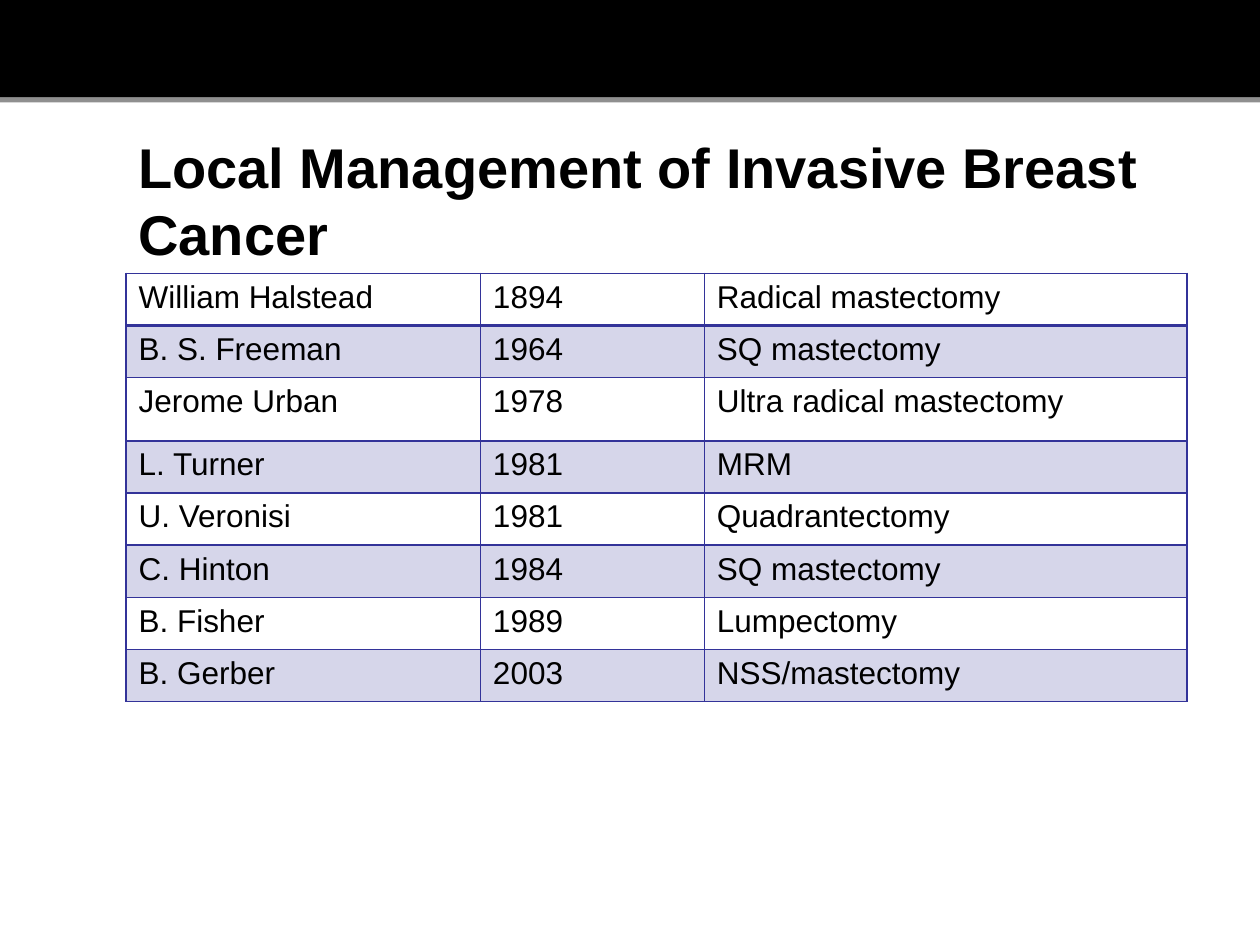
from dataclasses import dataclass

from lxml.etree import SubElement
from pptx import Presentation
from pptx.dml.color import RGBColor
from pptx.enum.shapes import MSO_SHAPE
from pptx.enum.text import MSO_ANCHOR
from pptx.oxml.ns import qn
from pptx.util import Cm, Pt


@dataclass(frozen=True)
class Theme:
    font: str = "Arial"
    ink: str = "000000"
    accent: str = "333399"
    band_opacity: int = 20
    shadow_opacity: int = 43
    title_size: int = 32
    body_size: int = 18


THEME = Theme()
PROCEDURES = [
    ("William Halstead", "1894", "Radical mastectomy"),
    ("B. S. Freeman", "1964", "SQ mastectomy"),
    ("Jerome Urban", "1978", "Ultra radical mastectomy"),
    ("L. Turner", "1981", "MRM"),
    ("U. Veronisi", "1981", "Quadrantectomy"),
    ("C. Hinton", "1984", "SQ mastectomy"),
    ("B. Fisher", "1989", "Lumpectomy"),
    ("B. Gerber", "2003", "NSS/mastectomy"),
]
COLUMN_SHARES = (0.334, 0.211, 0.455)
ROW_HEIGHT = 1.05
TALL_ROW, TALL_ROW_HEIGHT = 2, 1.28


def write_text(frame, text, size=THEME.body_size, bold=False, anchor=MSO_ANCHOR.TOP):
    frame.word_wrap = True
    frame.vertical_anchor = anchor
    run = frame.paragraphs[0].add_run()
    run.text = text
    run.font.name = THEME.font
    run.font.size = Pt(size)
    run.font.bold = bold
    run.font.color.rgb = RGBColor.from_string(THEME.ink)


def add_color(parent, color, opacity=100):
    """Append an sRGB colour with its opacity in percent."""
    element = SubElement(parent, qn("a:srgbClr"), val=color)
    if opacity < 100:
        SubElement(element, qn("a:alpha"), val=str(opacity * 1000))


def add_header_band(slide, left, top, width, height):
    band = slide.shapes.add_shape(
        MSO_SHAPE.RECTANGLE, Cm(left), Cm(top), Cm(width), Cm(height))
    band.fill.solid()
    band.fill.fore_color.rgb = RGBColor.from_string(THEME.ink)
    band.line.fill.background()
    band.shadow.inherit = False
    effects = band.element.spPr.find(qn("a:effectLst"))
    shadow = SubElement(effects, qn("a:outerShdw"), blurRad="0",
                        dist=str(Pt(3)), dir="5400000", rotWithShape="0")
    add_color(shadow, THEME.ink, THEME.shadow_opacity)


def add_title(slide, left, top, width, height):
    title = slide.shapes.add_textbox(Cm(left), Cm(top), Cm(width), Cm(height))
    write_text(title.text_frame, "Local Management of Invasive Breast Cancer",
               size=THEME.title_size, bold=True, anchor=MSO_ANCHOR.BOTTOM)


def style_cell(cell, banded, widths):
    """Draw the borders, given as side and points, and fill banded rows."""
    properties = cell._tc.get_or_add_tcPr()
    for side, points in widths.items():
        border = SubElement(properties, qn(f"a:ln{side}"), w=str(Pt(points)))
        add_color(SubElement(border, qn("a:solidFill")), THEME.accent)
    if banded:
        add_color(SubElement(properties, qn("a:solidFill")),
                  THEME.accent, THEME.band_opacity)
    else:
        cell.fill.background()


def add_procedure_table(slide, left, top, width):
    heights = [ROW_HEIGHT] * len(PROCEDURES)
    heights[TALL_ROW] = TALL_ROW_HEIGHT
    table = slide.shapes.add_table(
        len(PROCEDURES), len(COLUMN_SHARES),
        Cm(left), Cm(top), Cm(width), Cm(sum(heights))).table
    table.first_row = False
    table.horz_banding = False
    for column, share in zip(table.columns, COLUMN_SHARES):
        column.width = Cm(width * share)
    for row_index, (row, height, entry) in enumerate(
            zip(table.rows, heights, PROCEDURES)):
        row.height = Cm(height)
        widths = {"L": 1, "R": 1,
                  "T": 2 if row_index == 1 else 1,
                  "B": 2 if row_index == 0 else 1}
        for cell, text in zip(row.cells, entry):
            style_cell(cell, row_index % 2 == 1, widths)
            write_text(cell.text_frame, text)


def main():
    presentation = Presentation()
    presentation.slide_width = Cm(25.4)
    presentation.slide_height = Cm(19.05)
    slide = presentation.slides.add_slide(presentation.slide_layouts[6])
    add_header_band(slide, 0, 0, 25.4, 1.96)
    add_title(slide, 2.54, 2.54, 22.86, 2.97)
    add_procedure_table(slide, 2.54, 5.51, 21.39)
    presentation.save("out.pptx")


if __name__ == "__main__":
    main()
